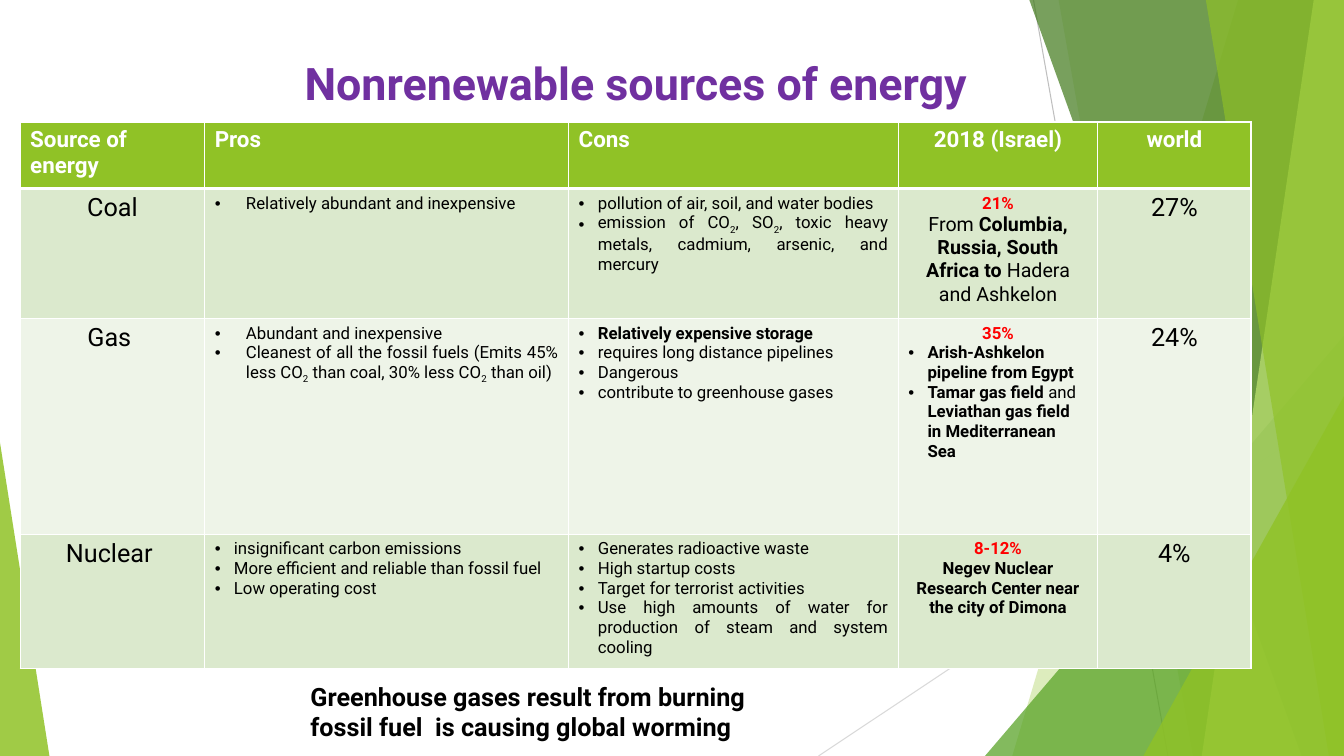
"""Build a slide with a table comparing nonrenewable sources of energy."""
from lxml import etree
from pptx import Presentation
from pptx.dml.color import RGBColor
from pptx.enum.shapes import MSO_CONNECTOR, MSO_SHAPE
from pptx.enum.text import MSO_AUTO_SIZE, PP_ALIGN
from pptx.oxml.ns import qn
from pptx.util import Inches, Pt

LEFT, CENTER, JUSTIFY = PP_ALIGN.LEFT, PP_ALIGN.CENTER, PP_ALIGN.JUSTIFY
TRIANGLE, STRAIGHT = MSO_SHAPE.ISOSCELES_TRIANGLE, MSO_CONNECTOR.STRAIGHT
GROW = MSO_AUTO_SIZE.SHAPE_TO_FIT_TEXT

THEME = {
    "font": "Roboto", "title": 32, "head": 16, "label": 18, "detail": 14, "body": 12,
    "purple": "7030A0", "white": "FFFFFF", "black": "000000", "red": "FF0000",
    "green": "90C226", "leaf": "54A021", "forest": "3F7819", "lime": "C0E474",
    "band": ("DBE9CD", "EEF4E8"), "grey": "BFBFBF", "pale_grey": "D9D9D9",
}
BODY, LABEL = THEME["body"], THEME["label"]


def rgb(name):
    return RGBColor.from_string(THEME.get(name, name))


def write(tf, paragraphs, color="black"):
    """Fill tf from (size, align, indent, runs); run marks are b bold, r red, s subscript."""
    tf.word_wrap = True
    for i, (size, align, indent, runs) in enumerate(paragraphs):
        p = tf.paragraphs[0] if i == 0 else tf.add_paragraph()
        p.alignment = align
        if indent:
            pPr = p._p.get_or_add_pPr()
            pPr.set("marL", str(Inches(indent)))
            pPr.set("indent", str(-Inches(indent)))
            etree.SubElement(pPr, qn("a:buFont")).set("typeface", "Arial")
            etree.SubElement(pPr, qn("a:buChar")).set("char", "•")
        for text, marks in runs:
            r = p.add_run()
            r.text = text
            r.font.name, r.font.size = THEME["font"], Pt(size)
            r.font.bold = "b" in marks
            r.font.color.rgb = rgb("red" if "r" in marks else color)
            if "s" in marks:
                r._r.get_or_add_rPr().set("baseline", "-25000")


prs = Presentation()
prs.slide_width, prs.slide_height = Inches(13.33), Inches(7.5)
X, Y = prs.slide_width / 100, prs.slide_height / 100
slide = prs.slides.add_slide(prs.slide_layouts[6])

for x1, y1, x2, y2, color in [(76.9, 0, 86.9, 100, "grey"), (100, 53.73, 60.9, 100, "pale_grey")]:
    s = slide.shapes.add_connector(STRAIGHT, int(x1 * X), int(y1 * Y), int(x2 * X), int(y2 * Y))
    s.line.color.rgb, s.line.width = rgb(color), Pt(0.75)
    etree.SubElement(s._element.spPr, qn("a:effectLst"))

facets = [
    ("shard", 92.12, 75.32, "green", 30),
    ("shard", 78.77, 88.75, "green", 20),
    ("right", 73.29, 44.4, "leaf", 72),
    ("shard", 76.59, 96.85, "forest", 70),
    ("shard", 97.75, 89.42, "lime", 70),
    ("shard", 89.72, 98.87, "green", 65),
    ("right", 85.07, 52.4, "green", 80),
    ("left", 3.68, 58.53, "green", 85),
]
for kind, a, b, color, opacity in facets:
    if kind == "shard":
        builder = slide.shapes.build_freeform(int(a * X), 0)
        builder.add_line_segments([(int(x * X), int(y * Y)) for x, y in [(100, 0), (100, 100), (b, 100)]])
        s = builder.convert_to_shape()
    else:
        x, width = (a, 100 - a) if kind == "right" else (0, a)
        s = slide.shapes.add_shape(TRIANGLE, int(x * X), int(b * Y), int(width * X), int((100 - b) * Y))
        s.adjustments[0] = 1 if kind == "right" else 0
    s.shadow.inherit = False
    s.line.fill.background()
    s.fill.solid()
    s.fill.fore_color.rgb = rgb(color)
    clr = s._element.spPr.find(".//" + qn("a:srgbClr"))
    etree.SubElement(clr, qn("a:alpha")).set("val", str(opacity * 1000))

heads = [("Source of energy", LEFT), ("Pros", LEFT), ("Cons", LEFT), ("2018 (Israel)", CENTER), ("world", CENTER)]
sources = [
    ("Coal",
     [(BODY, LEFT, 0.31, [("Relatively abundant and inexpensive", "")])],
     [(BODY, JUSTIFY, 0.19, [("pollution of air, soil, and water bodies", "")]),
      (BODY, JUSTIFY, 0.19, [("emission of CO", ""), ("2", "s"), (", SO", ""), ("2", "s"),
                             (", toxic heavy metals, cadmium, arsenic, and mercury", "")])],
     [(BODY, CENTER, 0, [("21%", "br")]),
      (THEME["detail"], CENTER, 0, [("From ", ""), ("Columbia, Russia, South Africa to ", "b"),
                                    ("Hadera and Ashkelon", "")])],
     "27%"),
    ("Gas ",
     [(BODY, JUSTIFY, 0.31, [("Abundant and inexpensive", "")]),
      (BODY, JUSTIFY, 0.31, [("Cleanest of all the fossil fuels (Emits 45% less CO", ""), ("2", "s"),
                             (" than coal, 30% less CO", ""), ("2", "s"), (" than oil)", "")])],
     [(BODY, JUSTIFY, 0.19, [("Relatively expensive storage", "b")]),
      (BODY, JUSTIFY, 0.19, [("requires long distance pipelines", "")]),
      (BODY, JUSTIFY, 0.19, [("Dangerous", "")]),
      (BODY, JUSTIFY, 0.19, [("contribute to greenhouse gases", "")])],
     [(BODY, CENTER, 0, [("35%", "br")]),
      (BODY, LEFT, 0.19, [("Arish-Ashkelon pipeline from Egypt", "b")]),
      (BODY, LEFT, 0.19, [("Tamar gas field", "b"), (" and ", ""),
                          ("Leviathan gas field in Mediterranean Sea", "b")])],
     "24%"),
    ("Nuclear ",
     [(BODY, LEFT, 0.19, [("insignificant carbon emissions", "")]),
      (BODY, LEFT, 0.19, [("More efficient and reliable than fossil fuel", "")]),
      (BODY, LEFT, 0.19, [("Low operating cost", "")])],
     [(BODY, JUSTIFY, 0.19, [("Generates radioactive waste", "")]),
      (BODY, JUSTIFY, 0.19, [("High startup costs", "")]),
      (BODY, JUSTIFY, 0.19, [("Target for terrorist activities", "")]),
      (BODY, JUSTIFY, 0.19, [("Use high amounts of water for production of steam and system cooling", "")])],
     [(BODY, CENTER, 0, [("8-12%", "br")]),
      (BODY, CENTER, 0, [("Negev Nuclear Research Center near the city of Dimona", "b")])],
     "4%"),
]
rows = [[[(THEME["head"], align, 0, [(text, "b")])] for text, align in heads]]
for name, pros, cons, israel, world in sources:
    label, share = [[(LABEL, CENTER, 0, [(text, "")])] for text in (name, world)]
    rows.append([label, pros, cons, israel, share])

col_widths, row_heights = [13.73, 27.08, 24.53, 14.85, 11.4], [8.8, 17.2, 28.53, 17.73]
table = slide.shapes.add_table(
    len(rows), len(heads), int(1.5 * X), int(16.13 * Y),
    int(sum(col_widths) * X), int(sum(row_heights) * Y)).table
for column, width in zip(table.columns, col_widths):
    column.width = int(width * X)
for i, (row, height) in enumerate(zip(table.rows, row_heights)):
    row.height = int(height * Y)
    for cell, paragraphs in zip(row.cells, rows[i]):
        write(cell.text_frame, paragraphs, "black" if i else "white")
        tcPr = cell._tc.get_or_add_tcPr()
        for side in "LRTB":
            thick = (i == 0 and side == "B") or (i == 1 and side == "T")
            ln = etree.SubElement(tcPr, qn("a:ln" + side), w=str(Pt(3 if thick else 1)))
            fill = etree.SubElement(ln, qn("a:solidFill"))
            etree.SubElement(fill, qn("a:srgbClr"), val=THEME["white"])
        cell.fill.solid()
        cell.fill.fore_color.rgb = rgb(THEME["band"][(i - 1) % 2] if i else "green")

captions = [
    ("Nonrenewable sources of energy", 18.53, 6.67, 57.61, 8.53, THEME["title"], CENTER, "purple"),
    ("Greenhouse gases result from burning fossil fuel  is causing global worming",
     22.36, 89.47, 34.81, 9.33, LABEL, LEFT, "black"),
]
for text, x, y, width, height, size, align, color in captions:
    tf = slide.shapes.add_textbox(int(x * X), int(y * Y), int(width * X), int(height * Y)).text_frame
    tf.auto_size = GROW
    write(tf, [(size, align, 0, [(text, "b")])], color)

prs.save("out.pptx")
